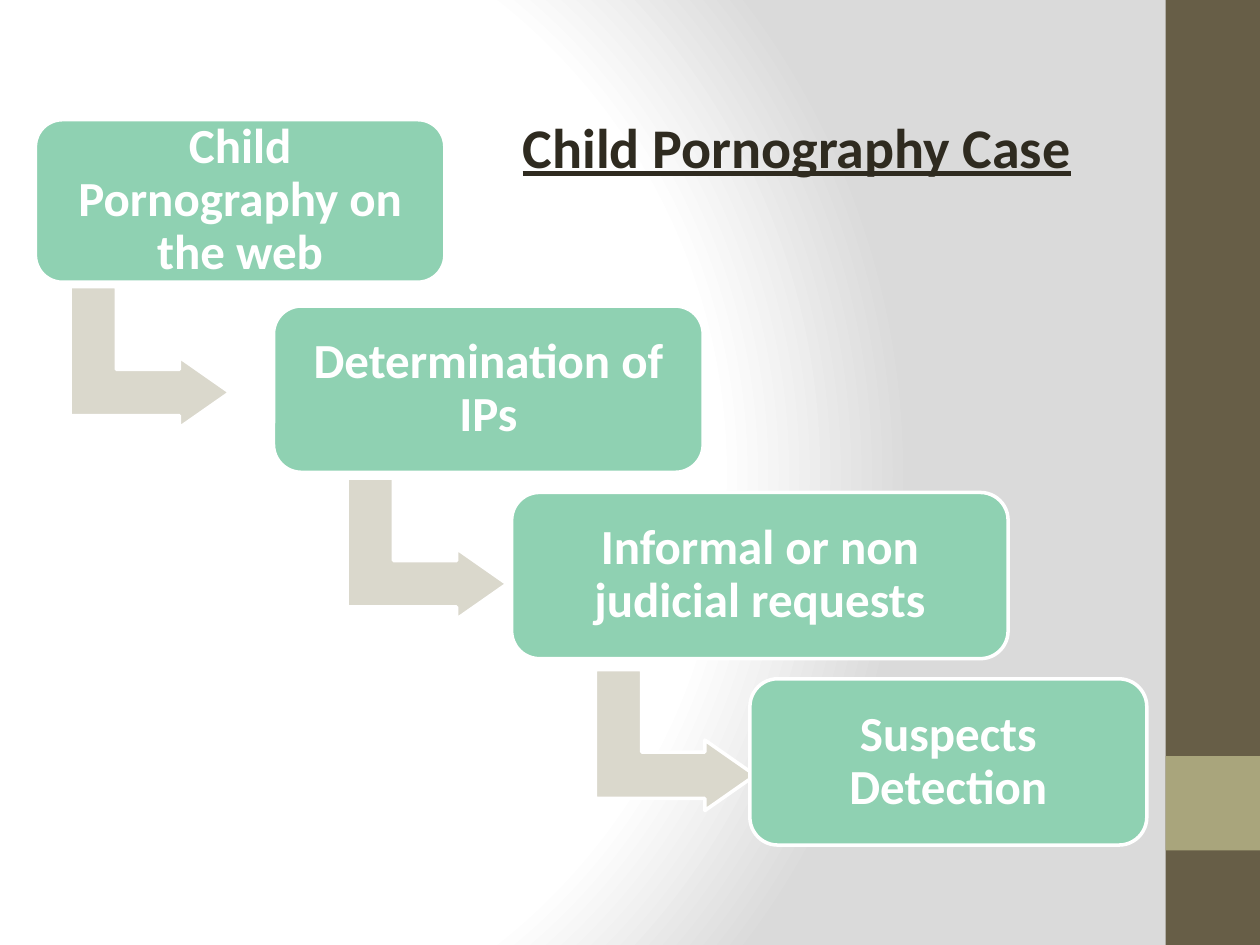
import pptx
import pptx.dml.color
import pptx.enum.shapes
import pptx.enum.text
import pptx.oxml.ns
import pptx.util
from dataclasses import dataclass
from lxml import etree

Pt = pptx.util.Pt
SHAPES = pptx.enum.shapes.MSO_SHAPE
qn = pptx.oxml.ns.qn


@dataclass(frozen=True)
class Theme:
    font: str = "Calibri"
    title_size: float = 32
    step_size: float = 28
    title: str = "2F2B20"
    white: str = "FFFFFF"
    grey: str = "DADADA"
    band: str = "675E47"
    accent: str = "A9A57C"
    step: str = "8FD1B2"
    arrow: str = "DAD8CC"


THEME = Theme()

# Text and width of each step, in points
STEPS = [
    ("Child Pornography on the web", 234),
    ("Determination of IPs", 245.5),
    ("Informal or non judicial requests", 283.7),
    ("Suspects Detection", 226.8),
]
ARROW_LEFTS = [45.4, 203.8, 345.6]


def rgb(color):
    return pptx.dml.color.RGBColor.from_string(color)


def set_background(s):
    """Radial gradient: white in the middle, grey towards the right."""
    s.background.fill.gradient()
    grad = s.element.find(".//" + qn("a:gradFill"))
    for child in list(grad):
        grad.remove(child)
    stops = etree.SubElement(grad, qn("a:gsLst"))
    for pos, color in [(0, THEME.white), (75, THEME.white), (100, THEME.grey)]:
        gs = etree.SubElement(stops, qn("a:gs"), pos=str(pos * 1000))
        etree.SubElement(gs, qn("a:srgbClr"), val=color)
    circle = etree.SubElement(grad, qn("a:path"))
    circle.set("path", "circle")
    etree.SubElement(circle, qn("a:fillToRect"),
                     l="20000", t="50000", r="100000", b="50000")


def add_shape(s, kind, box, fill, line=None, adjustments=()):
    sp = s.shapes.add_shape(kind, *map(Pt, box))
    sp.shadow.inherit = False
    sp.fill.solid()
    sp.fill.fore_color.rgb = rgb(fill)
    if line:
        sp.line.color.rgb = rgb(line)
        sp.line.width = Pt(2)
    else:
        sp.line.fill.background()
    for i, value in enumerate(adjustments):
        sp.adjustments[i] = value
    return sp


def set_text(tf, text, size, color):
    tf.text = text
    tf.word_wrap = True
    p = tf.paragraphs[0]
    font = p.runs[0].font
    font.name, font.size, font.bold = THEME.font, Pt(size), True
    font.color.rgb = rgb(color)
    return p


def add_arrow(s, left, top):
    sp = add_shape(s, SHAPES.BENT_UP_ARROW, (left, top, 80.6, 91.4),
                   THEME.arrow, THEME.white, (0.328, 0.25, 0.358))
    sp.rotation = 90


def add_step(s, text, box):
    sp = add_shape(s, SHAPES.ROUNDED_RECTANGLE, box,
                   THEME.step, THEME.white, (0.167,))
    tf = sp.text_frame
    p = set_text(tf, text, THEME.step_size, THEME.white)
    p.alignment = pptx.enum.text.PP_ALIGN.CENTER
    p.line_spacing = 0.9
    tf.vertical_anchor = pptx.enum.text.MSO_ANCHOR.MIDDLE
    tf.margin_left = tf.margin_right = Pt(8.4)
    tf.margin_top = tf.margin_bottom = Pt(8.4)


def add_title(s, text):
    sp = s.shapes.add_textbox(Pt(291.6), Pt(60.5), Pt(362.9), Pt(46.1))
    p = set_text(sp.text_frame, text, THEME.title_size, THEME.title)
    p.runs[0].font.underline = True


def main():
    prs = pptx.Presentation()
    prs.slide_width, prs.slide_height = Pt(720), Pt(540)
    s = prs.slides.add_slide(prs.slide_layouts[6])
    set_background(s)

    # Side band
    add_shape(s, SHAPES.RECTANGLE, (666, 0, 54, 540), THEME.band)
    add_shape(s, SHAPES.RECTANGLE, (666, 432, 54, 54), THEME.accent)

    # Staircase of steps, each with an arrow to the next
    for i, (text, width) in enumerate(STEPS):
        if i < len(ARROW_LEFTS):
            add_arrow(s, ARROW_LEFTS[i], 158.4 + 109.4 * i)
        height = 95 if i else 92.9
        add_step(s, text, (20.2 + 136.1 * i, 68.4 + 106.5 * i, width, height))

    add_title(s, "Child Pornography Case")
    prs.save("out.pptx")


if __name__ == "__main__":
    main()
